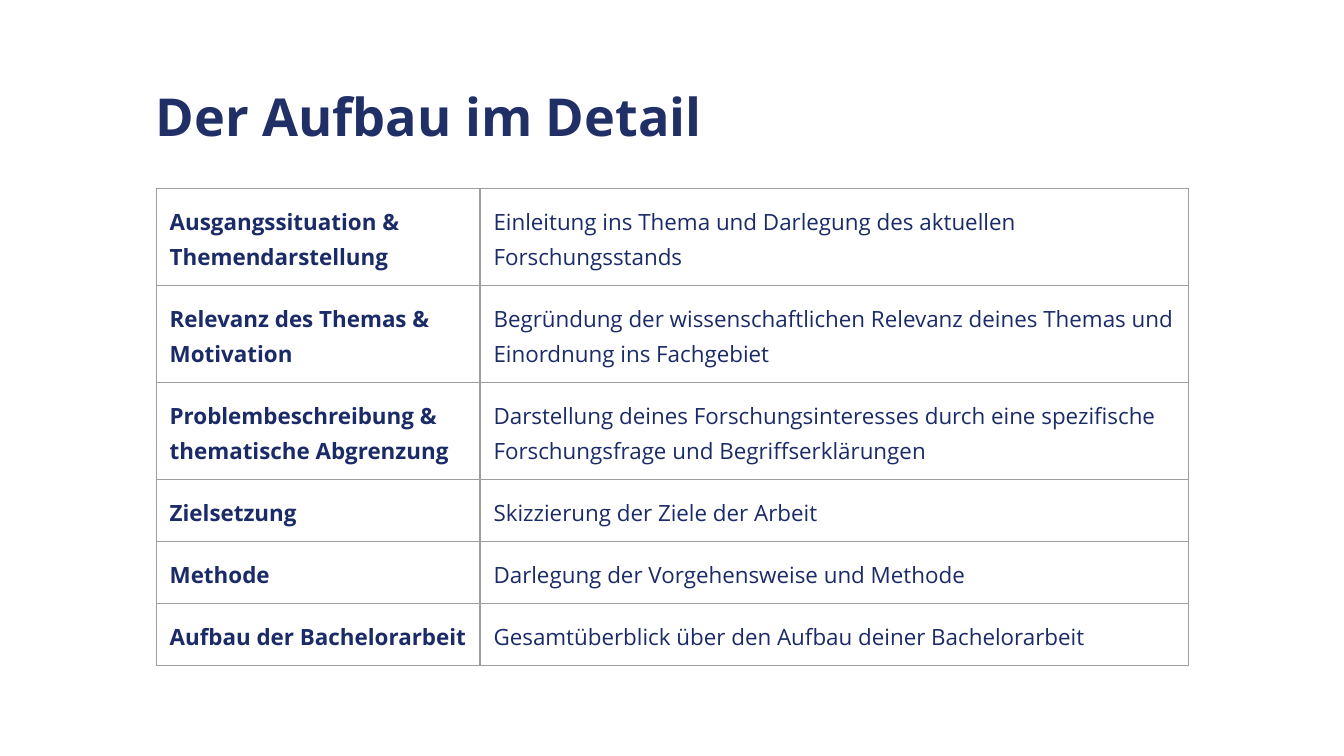
import pptx
import pptx.dml.color
import pptx.enum.text
import pptx.oxml
import pptx.oxml.ns
import pptx.util
from lxml import etree

Pt = pptx.util.Pt

COLORS = {"title": "202F66", "body": "1B2B68", "border": "9E9E9E"}
FONT = "Open Sans"
INSET = Pt(7.2)
MARGINS = {f"margin_{side}": INSET for side in ("left", "top", "right", "bottom")}
COLUMN_WIDTHS = (173.5, 379.5)
LINE_HEIGHTS = {1: 33.2, 2: 52}

# section, description, number of text lines
SECTIONS = [
    ("Ausgangssituation & Themendarstellung",
     "Einleitung ins Thema und Darlegung des aktuellen Forschungsstands", 2),
    ("Relevanz des Themas & Motivation",
     "Begründung der wissenschaftlichen Relevanz deines Themas und Einordnung ins Fachgebiet", 2),
    ("Problembeschreibung & thematische Abgrenzung",
     "Darstellung deines Forschungsinteresses durch eine spezifische "
     "Forschungsfrage und Begriffserklärungen", 2),
    ("Zielsetzung", "Skizzierung der Ziele der Arbeit", 1),
    ("Methode", "Darlegung der Vorgehensweise und Methode", 1),
    ("Aufbau der Bachelorarbeit", "Gesamtüberblick über den Aufbau deiner Bachelorarbeit", 1),
]


def apply_format(target, values):
    for name, value in values.items():
        setattr(target, name, value)


def write_text(paragraph, text, color, **font_format):
    run = paragraph.add_run()
    run.text = text
    apply_format(run.font, {"name": FONT, **font_format})
    run.font.color.rgb = pptx.dml.color.RGBColor.from_string(COLORS[color])


def add_title(slide, text):
    title = slide.shapes.add_textbox(Pt(76.3), Pt(38.2), Pt(566.6), Pt(45.4))
    frame = title.text_frame
    apply_format(frame, {**MARGINS, "word_wrap": True,
                         "vertical_anchor": pptx.enum.text.MSO_ANCHOR.TOP})
    write_text(frame.paragraphs[0], text, "title", size=Pt(28), bold=True)


def set_borders(cell):
    properties = cell._tc.get_or_add_tcPr()
    for position, edge in enumerate(("lnL", "lnR", "lnT", "lnB")):
        line = etree.Element(pptx.oxml.ns.qn(f"a:{edge}"), w=str(Pt(0.75)))
        fill = etree.SubElement(line, pptx.oxml.ns.qn("a:solidFill"))
        etree.SubElement(fill, pptx.oxml.ns.qn("a:srgbClr"), val=COLORS["border"])
        properties.insert(position, line)


def fill_cell(cell, text, bold):
    apply_format(cell, MARGINS)
    cell.fill.background()
    set_borders(cell)
    paragraph = cell.text_frame.paragraphs[0]
    paragraph.line_spacing = 1.15
    write_text(paragraph, text, "body", size=Pt(12), bold=bold)


def add_section_table(slide):
    heights = [LINE_HEIGHTS[lines] for *_, lines in SECTIONS]
    table = slide.shapes.add_table(
        len(SECTIONS), len(COLUMN_WIDTHS), Pt(83.7), Pt(100.9),
        Pt(sum(COLUMN_WIDTHS)), Pt(sum(heights))).table
    apply_format(table, {"first_row": False, "horz_banding": False})
    for column, width in zip(table.columns, COLUMN_WIDTHS):
        column.width = Pt(width)
    for row, height, (section, description, _) in zip(table.rows, heights, SECTIONS):
        row.height = Pt(height)
        fill_cell(row.cells[0], section, bold=True)
        fill_cell(row.cells[1], description, bold=False)


def main():
    presentation = pptx.Presentation()
    apply_format(presentation, {"slide_width": Pt(720), "slide_height": Pt(405)})
    slide = presentation.slides.add_slide(presentation.slide_layouts[6])
    add_title(slide, "Der Aufbau im Detail")
    add_section_table(slide)
    presentation.save("out.pptx")


if __name__ == "__main__":
    main()
